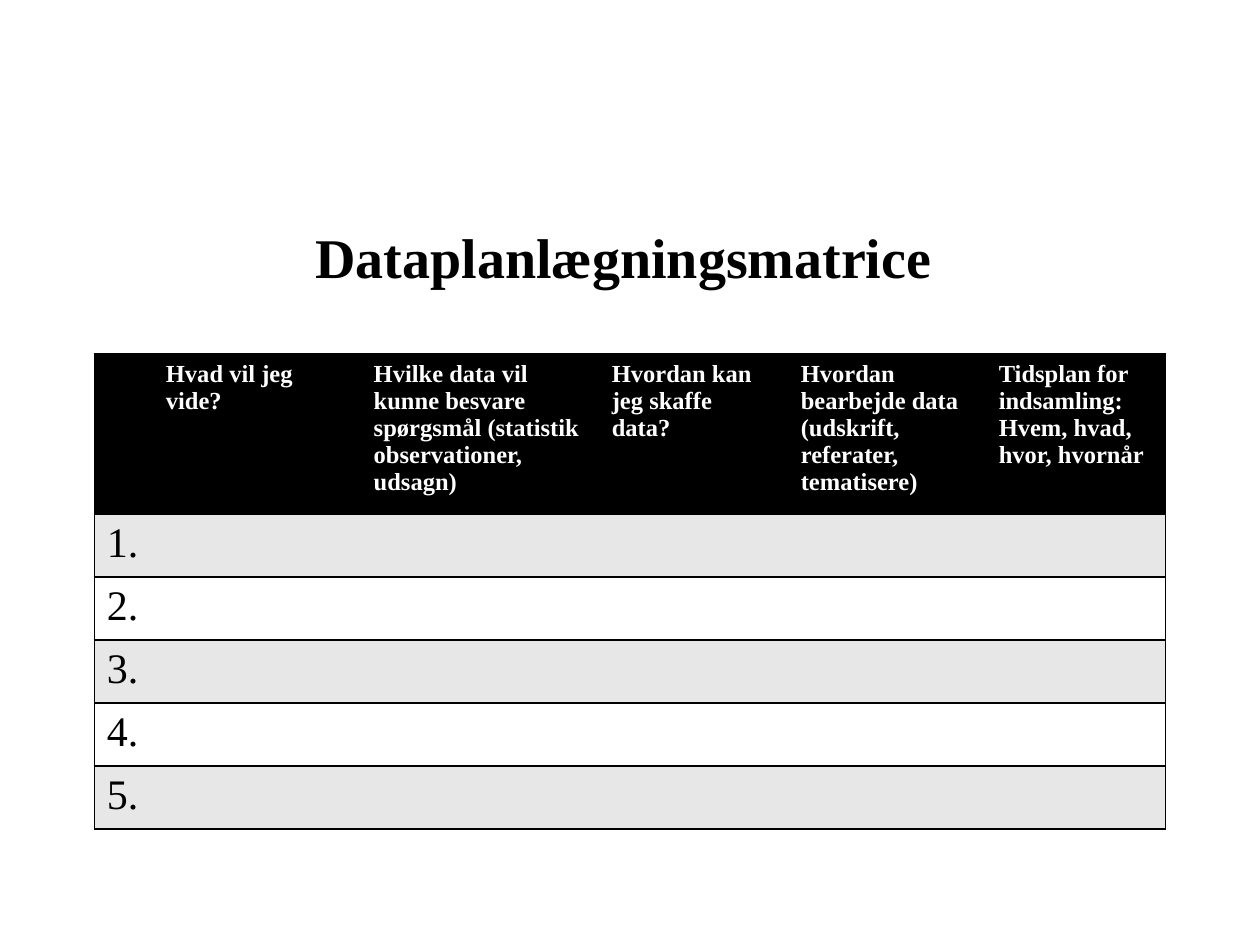
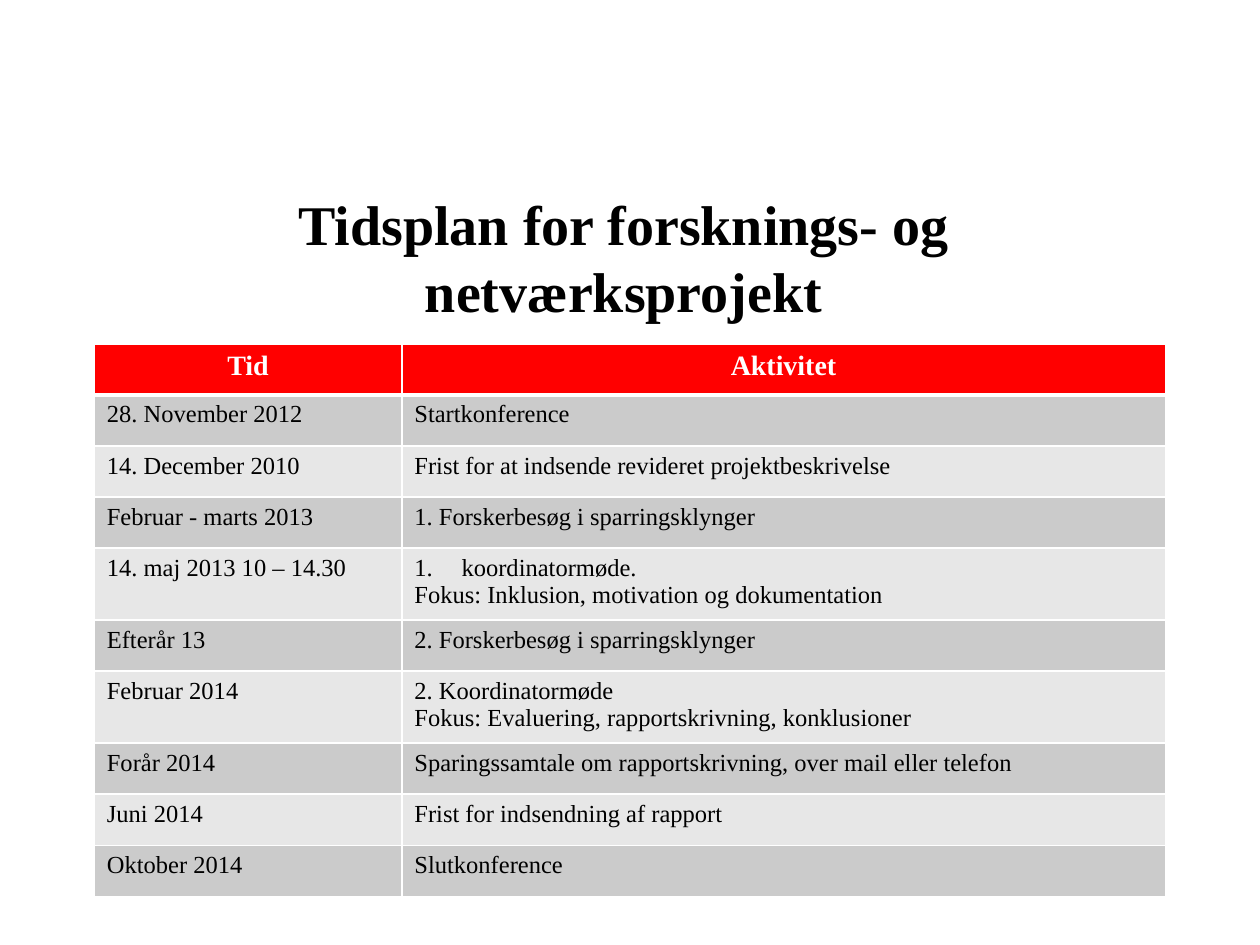
from dataclasses import dataclass
from typing import Optional

from lxml import etree
from pptx import Presentation
from pptx import util as u
from pptx.dml import color
from pptx.enum import text
from pptx.oxml import ns


@dataclass(frozen=True)
class Theme:
    font: str = "Times New Roman"
    black: str = "000000"
    white: str = "FFFFFF"
    red: str = "FF0000"
    light_grey: str = "E7E7E7"
    mid_grey: str = "CBCBCB"
    title_size: int = 32
    number_size: int = 24
    heading_size: int = 16
    body_size: int = 14
    thin_line: float = 1
    thick_line: float = 3


THEME = Theme()
TABLE_LEFT = 1.9


@dataclass(frozen=True)
class TextStyle:
    size: int
    hue: str
    bold: bool = False
    align: text.PP_ALIGN = text.PP_ALIGN.LEFT


@dataclass(frozen=True)
class Line:
    hue: str
    width: float = THEME.thin_line


@dataclass(frozen=True)
class Numbered:
    paragraphs: tuple[str, ...]
    indent: float = 0.95


CellText = str | Numbered


@dataclass(frozen=True)
class Grid:
    top: float
    columns: tuple[float, ...]
    row_heights: tuple[float, ...]
    rows: tuple[tuple[CellText, ...], ...]
    header_fill: str
    header_style: TextStyle
    header_line: Line
    bands: tuple[str, str]
    body_style: TextStyle
    line: Line
    inner_line: Optional[Line] = None


@dataclass(frozen=True)
class PageContent:
    title: str
    grid: Grid


TITLE_STYLE = TextStyle(THEME.title_size, THEME.black, True, text.PP_ALIGN.CENTER)

MATRIX_QUESTIONS = (
    "",
    "Hvad vil jeg vide?",
    "Hvilke data vil kunne besvare spørgsmål (statistik observationer, udsagn)",
    "Hvordan kan jeg skaffe data?",
    "Hvordan bearbejde data (udskrift, referater, tematisere)",
    "Tidsplan for indsamling: Hvem, hvad, hvor, hvornår",
)
MATRIX_ROWS = 5

MATRIX = Grid(
    top=7.14,
    columns=(1.19, 4.19, 4.8, 3.81, 3.99, 3.61),
    row_heights=(2.97,) + (1.19,) * MATRIX_ROWS,
    rows=(MATRIX_QUESTIONS,)
    + tuple((f"{number}.",) for number in range(1, MATRIX_ROWS + 1)),
    header_fill=THEME.black,
    header_style=TextStyle(THEME.body_size, THEME.white, True),
    header_line=Line(THEME.black),
    bands=(THEME.light_grey, THEME.white),
    body_style=TextStyle(THEME.number_size, THEME.black),
    line=Line(THEME.black),
)

SCHEDULE_ROWS = (
    ("Tid", "Aktivitet"),
    ("28. November 2012", "Startkonference"),
    ("14. December 2010", "Frist for at indsende revideret projektbeskrivelse"),
    ("Februar - marts 2013", "1. Forskerbesøg i sparringsklynger"),
    (
        "14. maj 2013 10 – 14.30",
        Numbered(("koordinatormøde.", "Fokus: Inklusion, motivation og dokumentation")),
    ),
    ("Efterår 13", "2. Forskerbesøg i sparringsklynger"),
    ("Februar 2014", "2. Koordinatormøde\nFokus: Evaluering, rapportskrivning, konklusioner"),
    ("Forår 2014", "Sparingssamtale om rapportskrivning, over mail eller telefon"),
    ("Juni 2014", "Frist for indsendning af rapport"),
    ("Oktober 2014", "Slutkonference"),
)


def schedule_height(activity: CellText) -> float:
    two_lines = isinstance(activity, Numbered) or "\n" in activity
    return 1.45 if two_lines else 1.03


SCHEDULE = Grid(
    top=6.93,
    columns=(6.2, 15.39),
    row_heights=tuple(schedule_height(activity) for _, activity in SCHEDULE_ROWS),
    rows=SCHEDULE_ROWS,
    header_fill=THEME.red,
    header_style=TextStyle(THEME.heading_size, THEME.white, True, text.PP_ALIGN.CENTER),
    header_line=Line(THEME.white, THEME.thick_line),
    bands=(THEME.mid_grey, THEME.light_grey),
    body_style=TextStyle(THEME.body_size, THEME.black),
    line=Line(THEME.white),
    inner_line=Line(THEME.white),
)

PAGES = (
    PageContent("Dataplanlægningsmatrice", MATRIX),
    PageContent("Tidsplan for forsknings- og netværksprojekt", SCHEDULE),
)


def style_paragraph(paragraph, style: TextStyle) -> None:
    paragraph.alignment = style.align
    font = paragraph.font
    font.name = THEME.font
    font.size = u.Pt(style.size)
    font.bold = style.bold
    font.color.rgb = color.RGBColor.from_string(style.hue)


def number_paragraphs(paragraphs, indent: float) -> None:
    for paragraph in paragraphs:
        properties = paragraph._p.get_or_add_pPr()
        properties.set("marL", str(u.Cm(indent)))
        properties.set("indent", str(-u.Cm(indent)))
    first = paragraphs[0]._p.get_or_add_pPr()
    etree.SubElement(first, ns.qn("a:buFont"), typeface="+mj-lt")
    etree.SubElement(first, ns.qn("a:buAutoNum"), type="arabicPeriod")


def fill_text(frame, content: CellText, style: TextStyle) -> None:
    if isinstance(content, Numbered):
        frame.text = "\n".join(content.paragraphs)
        number_paragraphs(frame.paragraphs, content.indent)
    else:
        frame.text = content
    for paragraph in frame.paragraphs:
        style_paragraph(paragraph, style)


def add_border(cell, side: str, line: Optional[Line]) -> None:
    properties = cell._tc.get_or_add_tcPr()
    border = etree.SubElement(properties, ns.qn(f"a:ln{side}"))
    if line is None:
        etree.SubElement(border, ns.qn("a:noFill"))
        return
    border.set("w", str(u.Pt(line.width)))
    fill = etree.SubElement(border, ns.qn("a:solidFill"))
    etree.SubElement(fill, ns.qn("a:srgbClr"), val=line.hue)


def draw_cell(cell, grid: Grid, row: int, column: int) -> None:
    last_column = len(grid.columns) - 1
    borders = {
        "L": grid.line if column == 0 else grid.inner_line,
        "R": grid.line if column == last_column else grid.inner_line,
        "T": grid.header_line if row == 1 else grid.line,
        "B": grid.header_line if row == 0 else grid.line,
    }
    for side, line in borders.items():
        add_border(cell, side, line)
    shade = grid.header_fill if row == 0 else grid.bands[(row - 1) % 2]
    cell.fill.solid()
    cell.fill.fore_color.rgb = color.RGBColor.from_string(shade)
    if column < len(grid.rows[row]):
        style = grid.header_style if row == 0 else grid.body_style
        fill_text(cell.text_frame, grid.rows[row][column], style)


def draw_grid(page, grid: Grid) -> None:
    table = page.shapes.add_table(
        len(grid.rows),
        len(grid.columns),
        u.Cm(TABLE_LEFT),
        u.Cm(grid.top),
        u.Cm(sum(grid.columns)),
        u.Cm(sum(grid.row_heights)),
    ).table
    for column, width in zip(table.columns, grid.columns):
        column.width = u.Cm(width)
    for row, height in zip(table.rows, grid.row_heights):
        row.height = u.Cm(height)
    for row in range(len(grid.rows)):
        for column in range(len(grid.columns)):
            draw_cell(table.cell(row, column), grid, row, column)


def draw_title(page, title: str) -> None:
    box = page.shapes.add_textbox(u.Cm(1.78), u.Cm(3.58), u.Cm(21.59), u.Cm(3.18))
    frame = box.text_frame
    frame.word_wrap = True
    frame.vertical_anchor = text.MSO_ANCHOR.MIDDLE
    fill_text(frame, title, TITLE_STYLE)


def main() -> None:
    deck = Presentation()
    deck.slide_width = u.Cm(25.4)
    deck.slide_height = u.Cm(19.05)
    for content in PAGES:
        page = deck.slides.add_slide(deck.slide_layouts[6])
        draw_title(page, content.title)
        draw_grid(page, content.grid)
    deck.save("out.pptx")


if __name__ == "__main__":
    main()
